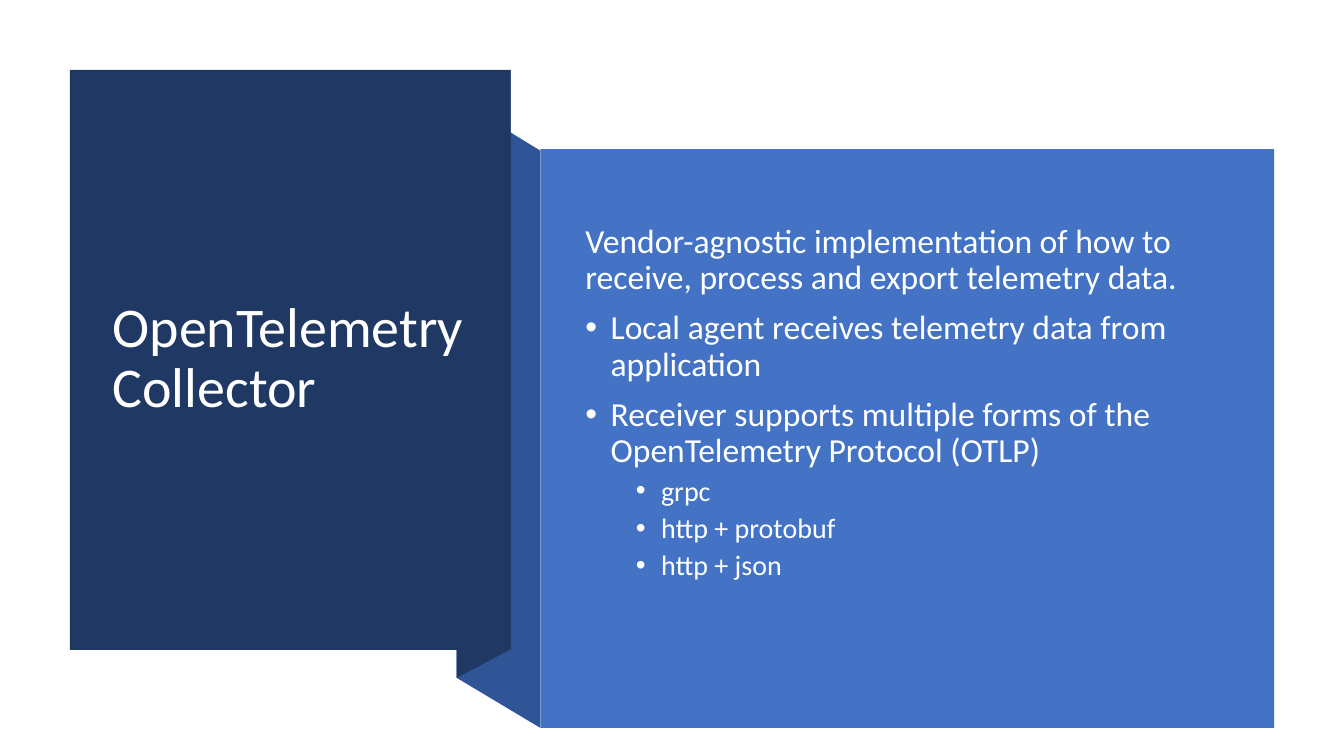
import pptx
import pptx.dml.color
import pptx.enum.shapes
import pptx.enum.text
import pptx.util
import lxml.etree

Pt = pptx.util.Pt

NAVY, BLUE, SKY, WHITE = "203864", "2F5597", "4472C4", "FFFFFF"
FONT = "Calibri"
TITLE = ["OpenTelemetry Collector"]
TITLE_BOX = (73.4, 77, 267.4, 359.3)
BODY = [
    ("Vendor-agnostic implementation of how to receive, process and export telemetry data.", 0),
    ("Local agent receives telemetry data from application", 1),
    ("Receiver supports multiple forms of the OpenTelemetry Protocol (OTLP)", 1),
    ("grpc", 2),
    ("http + protobuf", 2),
    ("http + json", 2),
]
BODY_BOX = (411.1, 135.4, 468.7, 341.3)
LEVELS = [
    {"size": 24, "before": 10},
    {"size": 24, "before": 10, "indent": 18},
    {"size": 20, "before": 5, "indent": 54},
]
HANGING = 18

TITLE_PANEL = (49.9, 50, 314.9, 414.3)
BODY_PANEL = (385.9, 106.6, 524.2, 413.3)
FOLD_X, FOLD_TOP, FOLD_BOTTOM = 326.2, 71, 484.2

left, top, width, height = TITLE_PANEL
title_right, title_bottom = left + width, top + height
body_left, body_top = BODY_PANEL[:2]
body_bottom = body_top + BODY_PANEL[3]
FOLDS = [
    (BLUE, [(body_left, body_bottom), (FOLD_X, FOLD_BOTTOM),
            (FOLD_X, FOLD_TOP), (body_left, body_top + 1)]),
    (NAVY, [(title_right, title_bottom - 0.5), (FOLD_X, FOLD_BOTTOM),
            (FOLD_X, FOLD_TOP), (title_right, top)]),
]

prs = pptx.Presentation()
prs.slide_width, prs.slide_height = Pt(960), Pt(540)
s = prs.slides.add_slide(prs.slide_layouts[6])


def color(value):
    return pptx.dml.color.RGBColor.from_string(value)


def paint(sp, value):
    sp.shadow.inherit = False
    sp.fill.solid()
    sp.fill.fore_color.rgb = color(value)
    sp.line.fill.background()


def add_fold(value, points):
    corners = [(Pt(x), Pt(y)) for x, y in points]
    builder = s.shapes.build_freeform(*corners[0], scale=1.0)
    builder.add_line_segments(corners[1:], close=True)
    paint(builder.convert_to_shape(), value)


def add_panel(box, value):
    sp = s.shapes.add_shape(pptx.enum.shapes.MSO_SHAPE.RECTANGLE, *map(Pt, box))
    paint(sp, value)


def add_text(box, bottom=3.6):
    tf = s.shapes.add_textbox(*map(Pt, box)).text_frame
    tf.word_wrap = True
    tf.vertical_anchor = pptx.enum.text.MSO_ANCHOR.MIDDLE
    tf.margin_bottom = Pt(bottom)
    return tf


def write(p, text, size, fill=WHITE, before=0, indent=0):
    p.line_spacing = 0.9
    p.space_before = Pt(before)
    r = p.add_run()
    r.text = text
    r.font.name, r.font.size = FONT, Pt(size)
    r.font.color.rgb = color(fill)
    if indent:
        pPr = p._p.get_or_add_pPr()
        pPr.set("marL", str(Pt(indent)))
        pPr.set("indent", str(-Pt(HANGING)))
        for tag, key, value in (("buFont", "typeface", "Arial"), ("buChar", "char", "•")):
            lxml.etree.SubElement(pPr, pptx.oxml.ns.qn("a:" + tag)).set(key, value)


for value, points in FOLDS:
    add_fold(value, points)
add_panel(TITLE_PANEL, NAVY)
write(add_text(TITLE_BOX).paragraphs[0], TITLE[0], size=40)

add_panel(BODY_PANEL, SKY)
tf = add_text(BODY_BOX, bottom=40)
for i, (text, level) in enumerate(BODY):
    p = tf.add_paragraph() if i else tf.paragraphs[0]
    p.level = max(level - 1, 0)
    write(p, text, fill="FEFFFF", **LEVELS[level])

prs.save("out.pptx")
